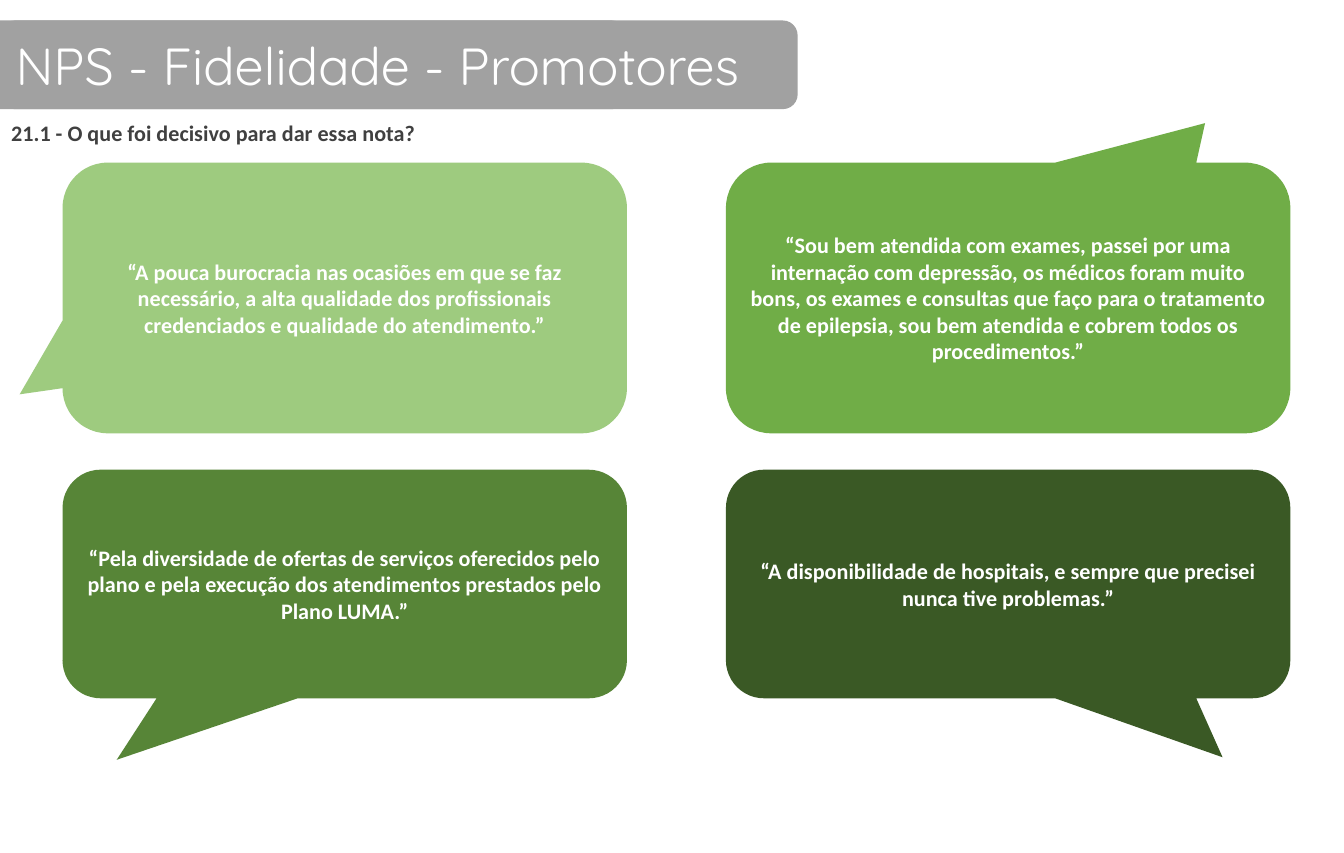
from dataclasses import dataclass

import pptx
import pptx.dml.color
import pptx.enum.shapes
import pptx.enum.text
import pptx.shapes.autoshape
import pptx.slide
import pptx.util

Inches = pptx.util.Inches
Shape = pptx.shapes.autoshape.Shape
Slide = pptx.slide.Slide
PRESET = pptx.enum.shapes.MSO_SHAPE
ALIGN = pptx.enum.text.PP_ALIGN
ANCHOR = pptx.enum.text.MSO_ANCHOR

COLORS = {
    "banner": "A1A1A1",
    "white": "FFFFFF",
    "question": "404040",
    "light": "9ECB7F",
    "medium": "70AD47",
    "deep": "578537",
    "dark": "3A5925",
}
PAGE_WIDTH = 30 / 2.54  # 30 cm
PAGE_HEIGHT = 7.5
COLUMNS = (0.55, 6.38)
ROWS = ((1.43, 2.38), (4.13, 2.01))  # top, height
BUBBLE_WIDTH = 4.96


@dataclass(frozen=True)
class Quote:
    text: str
    color: str
    tail: tuple[float, float]  # tip offset from the centre, as a share of the size


QUOTES = (
    Quote("“A pouca burocracia nas ocasiões em que se faz necessário, a alta qualidade "
          "dos profissionais credenciados e qualidade do atendimento.”",
          "light", (-0.576, 0.356)),
    Quote("“Sou bem atendida com exames, passei por uma internação com depressão, os "
          "médicos foram muito bons, os exames e consultas que faço para o tratamento de "
          "epilepsia, sou bem atendida e cobrem todos os procedimentos.”",
          "medium", (0.349, -0.646)),
    Quote("“Pela diversidade de ofertas de serviços oferecidos pelo plano e pela execução "
          "dos atendimentos prestados pelo Plano LUMA.”",
          "deep", (-0.404, 0.769)),
    Quote("“A disponibilidade de hospitais, e sempre que precisei nunca tive problemas.”",
          "dark", (0.38, 0.758)),
)


def rgb(color: str) -> pptx.dml.color.RGBColor:
    return pptx.dml.color.RGBColor.from_string(COLORS[color])


def add_filled(page: Slide, preset: PRESET, left: float, top: float,
               width: float, height: float, color: str) -> Shape:
    """Add a flat preset shape without outline or shadow."""
    shape = page.shapes.add_shape(
        preset, Inches(left), Inches(top), Inches(width), Inches(height))
    shape.shadow.inherit = False
    shape.fill.solid()
    shape.fill.fore_color.rgb = rgb(color)
    shape.line.fill.background()
    return shape


def write(box: Shape, text: str, size: float, color: str, align: ALIGN,
          font: str = "Calibri", bold: bool = True,
          anchor: ANCHOR = ANCHOR.MIDDLE) -> None:
    frame = box.text_frame
    frame.word_wrap = True
    frame.vertical_anchor = anchor
    frame.text = text
    para = frame.paragraphs[0]
    para.alignment = align
    span = para.runs[0]
    span.font.name = font
    span.font.size = pptx.util.Pt(size)
    span.font.bold = bold
    span.font.color.rgb = rgb(color)


def add_heading(page: Slide) -> None:
    """Add the title banner, which bleeds off the left edge, and the question."""
    add_filled(page, PRESET.ROUNDED_RECTANGLE, -0.24, 0.18, 5.75, 0.78, "banner")
    banner = add_filled(page, PRESET.ROUNDED_RECTANGLE, 0, 0.18, 7.01, 0.78, "banner")
    write(banner, "NPS - Fidelidade - Promotores", 33, "white", ALIGN.LEFT,
          font="Quicksand", bold=False)
    question = page.shapes.add_textbox(Inches(0), Inches(1), Inches(10.17), Inches(0.34))
    write(question, "21.1 - O que foi decisivo para dar essa nota?", 14, "question",
          ALIGN.JUSTIFY, anchor=ANCHOR.TOP)
    question.text_frame.auto_size = pptx.enum.text.MSO_AUTO_SIZE.SHAPE_TO_FIT_TEXT


def add_quote(page: Slide, quote: Quote, left: float, top: float, height: float) -> None:
    bubble = add_filled(page, PRESET.ROUNDED_RECTANGULAR_CALLOUT, left, top,
                        BUBBLE_WIDTH, height, quote.color)
    bubble.adjustments[0], bubble.adjustments[1] = quote.tail
    write(bubble, quote.text, 14, "white", ALIGN.CENTER)


def main() -> None:
    deck = pptx.Presentation()
    deck.slide_width = Inches(PAGE_WIDTH)
    deck.slide_height = Inches(PAGE_HEIGHT)
    page = deck.slides.add_slide(deck.slide_layouts[6])
    add_heading(page)
    for index, quote in enumerate(QUOTES):
        row, column = divmod(index, len(COLUMNS))
        top, height = ROWS[row]
        add_quote(page, quote, COLUMNS[column], top, height)
    deck.save("out.pptx")


if __name__ == "__main__":
    main()
